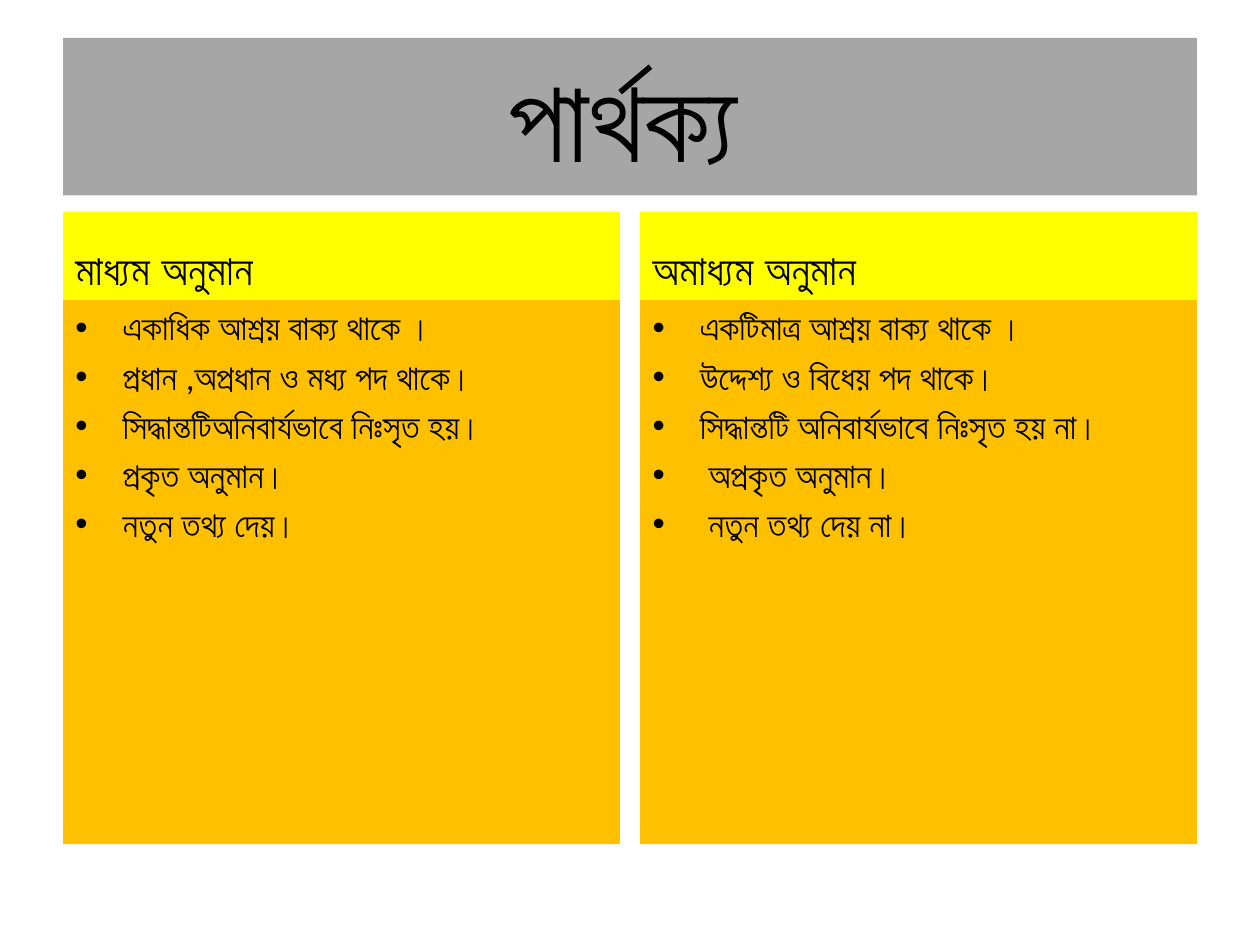
from lxml.etree import SubElement
from pptx import Presentation
from pptx.dml.color import RGBColor
from pptx.enum.text import MSO_ANCHOR, MSO_AUTO_SIZE, PP_ALIGN
from pptx.oxml.ns import qn
from pptx.util import Pt

BLACK = RGBColor(0x00, 0x00, 0x00)
GRAY = RGBColor(0xA6, 0xA6, 0xA6)
YELLOW = RGBColor(0xFF, 0xFF, 0x00)
AMBER = RGBColor(0xFF, 0xC0, 0x00)

MARGIN = 36
COLUMN_WIDTH = 318.2
COLUMN_STEP = 329.8
HEADING_TOP, HEADING_HEIGHT = 120.9, 50.4
LIST_HEIGHT = 311.1

COLUMNS = [
    ("মাধ্যম অনুমান", [
        "একাধিক আশ্রয় বাক্য থাকে ।",
        "প্রধান ,অপ্রধান ও মধ্য পদ থাকে।",
        "সিদ্ধান্তটিঅনিবার্যভাবে নিঃসৃত হয়।",
        "প্রকৃত অনুমান।",
        "নতুন তথ্য দেয়।",
    ]),
    ("অমাধ্যম অনুমান", [
        "একটিমাত্র আশ্রয় বাক্য থাকে ।",
        "উদ্দেশ্য ও বিধেয় পদ থাকে।",
        "সিদ্ধান্তটি অনিবার্যভাবে নিঃসৃত হয় না।",
        " অপ্রকৃত অনুমান।",
        " নতুন তথ্য দেয় না।",
    ]),
]


class ComparisonSlide:
    """Hold the text style and the slide, and add each kind of element."""

    def __init__(self, presentation, font_name="Calibri", color=BLACK):
        self.slide = presentation.slides.add_slide(presentation.slide_layouts[5])
        self.font_name = font_name
        self.color = color

    def style_font(self, font, size, bold=False):
        font.name = self.font_name
        font.size = Pt(size)
        font.bold = bold
        font.color.rgb = self.color

    def fill_panel(self, shape, fill, anchor):
        shape.fill.solid()
        shape.fill.fore_color.rgb = fill
        frame = shape.text_frame
        frame.word_wrap = True
        frame.auto_size = MSO_AUTO_SIZE.NONE
        frame.vertical_anchor = anchor
        return frame

    def add_title(self, text, left, top, width, height):
        title = self.slide.shapes.title
        title.left, title.top = Pt(left), Pt(top)
        title.width, title.height = Pt(width), Pt(height)
        paragraph = self.fill_panel(title, GRAY, MSO_ANCHOR.MIDDLE).paragraphs[0]
        paragraph.alignment = PP_ALIGN.CENTER
        for content, size in ((text, 66), (" ", 32)):
            run = paragraph.add_run()
            run.text = content
            self.style_font(run.font, size)

    def add_panel(self, lines, left, top, height, fill, anchor, size, bold=False):
        box = self.slide.shapes.add_textbox(
            Pt(left), Pt(top), Pt(COLUMN_WIDTH), Pt(height))
        frame = self.fill_panel(box, fill, anchor)
        frame.text = "\n".join(lines)
        for paragraph in frame.paragraphs:
            paragraph.space_before = Pt(size * 0.2)
            self.style_font(paragraph.font, size, bold)
        return frame

    def add_heading(self, text, left):
        self.add_panel([text], left, HEADING_TOP, HEADING_HEIGHT,
                       YELLOW, MSO_ANCHOR.BOTTOM, 24, bold=True)

    def add_bullet_list(self, items, left):
        frame = self.add_panel(items, left, HEADING_TOP + HEADING_HEIGHT, LIST_HEIGHT,
                               AMBER, MSO_ANCHOR.TOP, 20)
        for paragraph in frame.paragraphs:
            properties = paragraph._p.get_or_add_pPr()
            properties.set("marL", str(Pt(27)))
            properties.set("indent", str(-Pt(27)))
            bullet_font = SubElement(properties, qn("a:buFont"), typeface="Arial")
            bullet_font.addnext(SubElement(properties, qn("a:buChar"), char="•"))
            properties.append(properties.find(qn("a:defRPr")))


def main():
    presentation = Presentation()
    presentation.slide_width, presentation.slide_height = Pt(720), Pt(540)
    slide = ComparisonSlide(presentation)
    slide.add_title("পার্থক্য", MARGIN, 21.6, 648, 90)
    for index, (heading, items) in enumerate(COLUMNS):
        left = MARGIN + index * COLUMN_STEP
        slide.add_heading(heading, left)
        slide.add_bullet_list(items, left)
    presentation.save("out.pptx")


if __name__ == "__main__":
    main()
